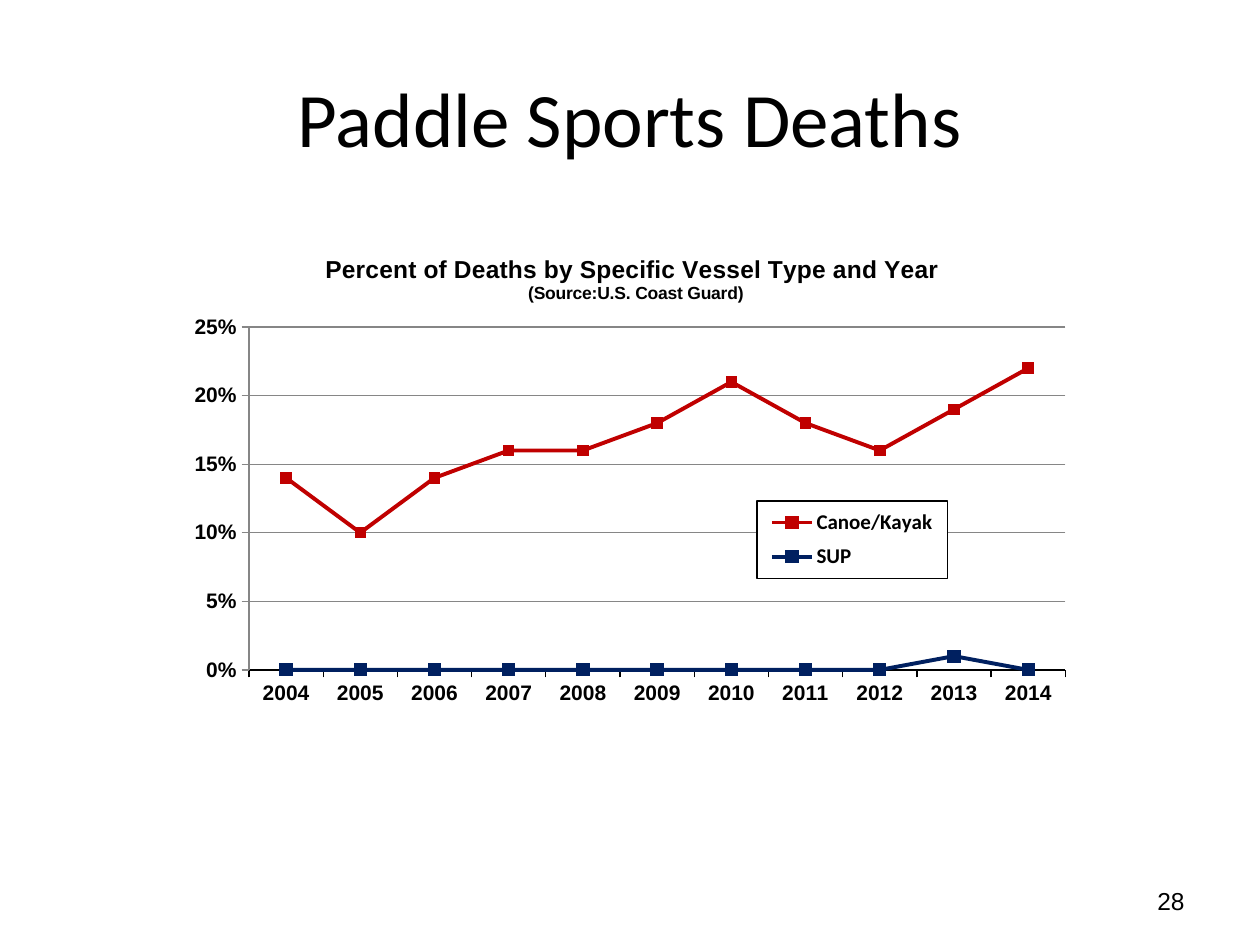
"""Build the slide on paddle sports deaths by vessel type and year."""
from dataclasses import dataclass

import lxml.etree
import pptx
import pptx.chart.data
import pptx.dml.color
import pptx.enum.chart
import pptx.enum.text
import pptx.oxml
import pptx.oxml.ns
import pptx.util

BLACK = pptx.dml.color.RGBColor(0x00, 0x00, 0x00)
GREY = pptx.dml.color.RGBColor(0x86, 0x86, 0x86)
RED = pptx.dml.color.RGBColor(0xC0, 0x00, 0x00)
NAVY = pptx.dml.color.RGBColor(0x00, 0x20, 0x60)
WIDTH = pptx.util.Inches(10)
HEIGHT = pptx.util.Inches(7.5)
YEARS = range(2004, 2015)


@dataclass(frozen=True)
class Area:
    """Position and size as shares of the enclosing space."""
    left: float
    top: float
    width: float = 0
    height: float = 0

    def on_slide(self) -> tuple:
        return (int(self.left * WIDTH), int(self.top * HEIGHT),
                int(self.width * WIDTH), int(self.height * HEIGHT))


@dataclass(frozen=True)
class Vessel:
    """One line of the chart."""
    name: str
    percents: tuple
    color: pptx.dml.color.RGBColor
    marker_size: int


VESSELS = (
    Vessel("Canoe/Kayak", (14, 10, 14, 16, 16, 18, 21, 18, 16, 19, 22), RED, 6),
    Vessel("SUP", (0, 0, 0, 0, 0, 0, 0, 0, 0, 1, 0), NAVY, 7),
)


def style_font(font, size: float, name: str, bold: bool = False) -> None:
    """Set a black font."""
    font.size = pptx.util.Pt(size)
    font.name = name
    font.bold = bold
    font.color.rgb = BLACK


def add_text(paragraph, text: str, size: float, name: str, bold: bool = False) -> None:
    """Append one formatted run."""
    run = paragraph.add_run()
    run.text = text
    style_font(run.font, size, name, bold)


def style_line(line, color: pptx.dml.color.RGBColor, width: float) -> None:
    """Set the colour and width of a line."""
    line.color.rgb = color
    line.width = pptx.util.Pt(width)


def set_layout(element, index: int, area: Area, inner: bool = False) -> None:
    """Place a part of the chart by shares of the chart space."""
    qn = pptx.oxml.ns.qn
    for old in element.findall(qn("c:layout")):
        element.remove(old)
    layout = lxml.etree.Element(qn("c:layout"))
    manual = lxml.etree.SubElement(layout, qn("c:manualLayout"))
    settings = [("layoutTarget", "inner")] if inner else []
    settings += [("xMode", "edge"), ("yMode", "edge"), ("x", area.left), ("y", area.top)]
    if area.width:
        settings += [("w", area.width), ("h", area.height)]
    for tag, value in settings:
        lxml.etree.SubElement(manual, qn(f"c:{tag}")).set("val", str(value))
    element.insert(index, layout)


def add_title(slide) -> None:
    """Fill and place the title placeholder."""
    title = slide.shapes.title
    title.left, title.top, title.width, title.height = Area(0.05, 0.04, 0.9, 1 / 6).on_slide()
    title.text_frame.vertical_anchor = pptx.enum.text.MSO_ANCHOR.MIDDLE
    heading = title.text_frame.paragraphs[0]
    heading.alignment = pptx.enum.text.PP_ALIGN.CENTER
    add_text(heading, "Paddle Sports Deaths", 44, "Calibri")


def add_page_number(slide) -> None:
    """Add the page number at the lower right."""
    frame = slide.shapes.add_textbox(*Area(0.717, 0.927, 0.233, 0.053).on_slide()).text_frame
    frame.word_wrap = True
    frame.vertical_anchor = pptx.enum.text.MSO_ANCHOR.MIDDLE
    number = frame.paragraphs[0]
    number.alignment = pptx.enum.text.PP_ALIGN.RIGHT
    add_text(number, "28", 14, "Arial")


def style_axes(chart) -> None:
    """Format both axes and the gridlines."""
    for axis, color in ((chart.category_axis, BLACK), (chart.value_axis, GREY)):
        axis.major_tick_mark = pptx.enum.chart.XL_TICK_MARK.OUTSIDE
        axis.minor_tick_mark = pptx.enum.chart.XL_TICK_MARK.NONE
        style_font(axis.tick_labels.font, 12, "Arial", True)
        style_line(axis.format.line, color, 0.75)
    percent = chart.value_axis
    percent.minimum_scale, percent.maximum_scale, percent.major_unit = 0, 0.25, 0.05
    percent.tick_labels.number_format = "0%"
    percent.tick_labels.number_format_is_linked = False
    percent.has_major_gridlines = True
    style_line(percent.major_gridlines.format.line, GREY, 0.75)


def add_legend(chart) -> None:
    """Add the framed legend over the plot."""
    chart.has_legend = True
    legend = chart.legend
    legend.position = pptx.enum.chart.XL_LEGEND_POSITION.RIGHT
    legend.include_in_layout = True
    style_font(legend.font, 12, "Calibri", True)
    element = legend._element
    set_layout(element, 1, Area(0.64, 0.56, 0.21, 0.16))
    frame = pptx.oxml.parse_xml(
        f'<c:spPr {pptx.oxml.ns.nsdecls("c", "a")}>'
        f'<a:solidFill><a:srgbClr val="FFFFFF"/></a:solidFill><a:ln w="9525">'
        f'<a:solidFill><a:srgbClr val="{BLACK}"/></a:solidFill></a:ln></c:spPr>')
    element.find(pptx.oxml.ns.qn("c:txPr")).addprevious(frame)


def add_deaths_chart(slide) -> None:
    """Add the line chart of deaths by vessel type."""
    data = pptx.chart.data.CategoryChartData(number_format="0%")
    data.categories = [str(year) for year in YEARS]
    for vessel in VESSELS:
        data.add_series(vessel.name, [percent / 100 for percent in vessel.percents])
    chart = slide.shapes.add_chart(
        pptx.enum.chart.XL_CHART_TYPE.LINE_MARKERS,
        *Area(0.14, 0.244, 0.72, 0.511).on_slide(), data).chart
    style_font(chart.font, 10, "Calibri")
    chart.plots[0].vary_by_categories = False
    for vessel, series in zip(VESSELS, chart.plots[0].series):
        series.smooth = False
        style_line(series.format.line, vessel.color, 2.25)
        series.marker.style = pptx.enum.chart.XL_MARKER_STYLE.SQUARE
        series.marker.size = vessel.marker_size
        series.marker.format.fill.solid()
        series.marker.format.fill.fore_color.rgb = vessel.color
        style_line(series.marker.format.line, vessel.color, 0.75)

    chart.has_title = True
    caption = chart.chart_title.text_frame
    add_text(caption.paragraphs[0], "Percent of Deaths by Specific Vessel Type and Year ",
             14, "Arial", True)
    add_text(caption.add_paragraph(), "(Source:U.S. Coast Guard)", 10, "Arial", True)
    set_layout(chart.chart_title._element, 1, Area(0.16, 0.04))
    style_axes(chart)
    add_legend(chart)
    plot_area = chart._chartSpace.chart.plotArea
    set_layout(plot_area, 0, Area(0.08, 0.2, 0.9, 0.71), inner=True)


def main() -> None:
    """Build and save the slide."""
    deck = pptx.Presentation()
    deck.slide_width, deck.slide_height = WIDTH, HEIGHT
    slide = deck.slides.add_slide(deck.slide_layouts.get_by_name("Title Only"))
    add_title(slide)
    add_page_number(slide)
    add_deaths_chart(slide)
    deck.save("out.pptx")


if __name__ == "__main__":
    main()
